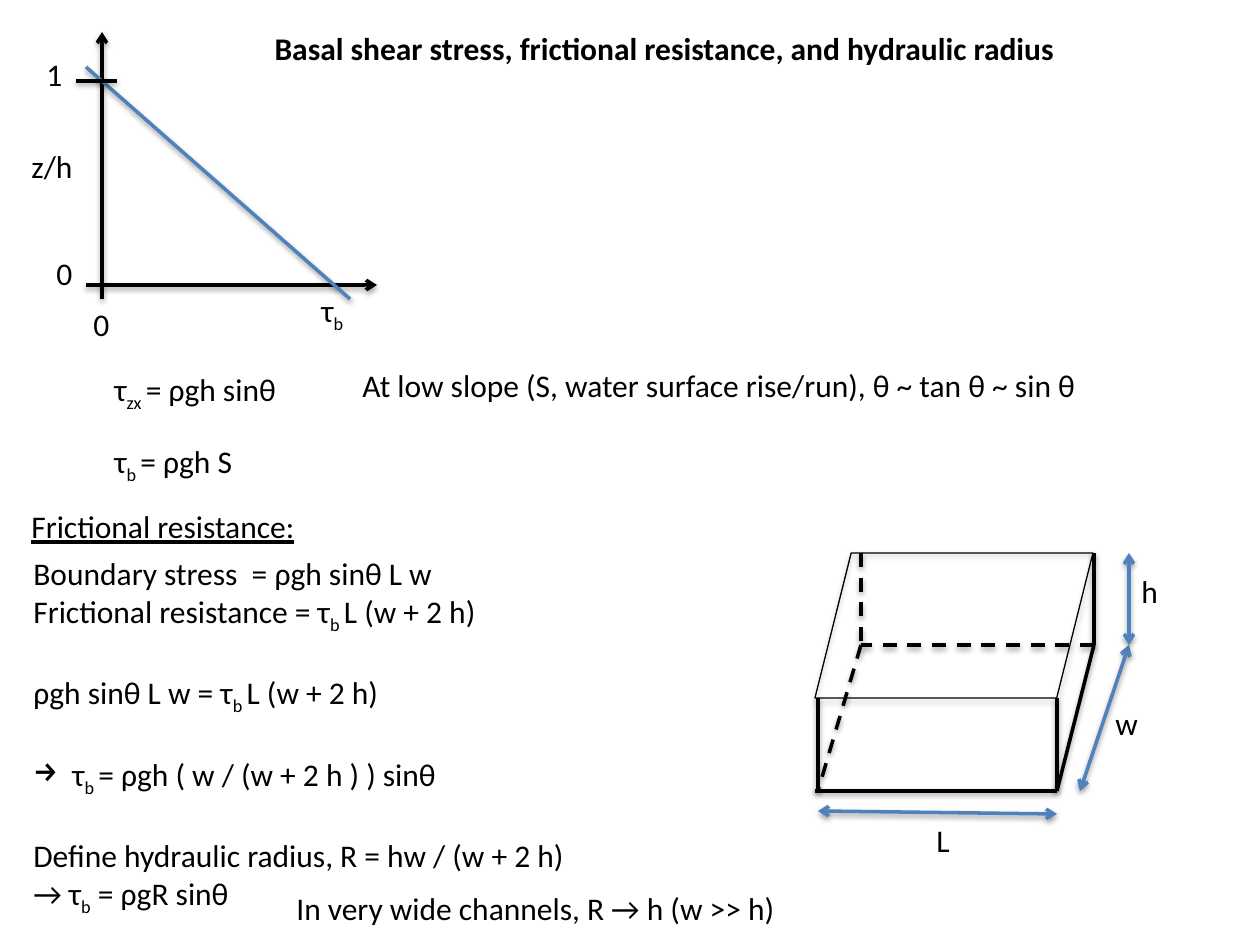
from lxml import etree
from pptx import Presentation
from pptx.dml.color import RGBColor
from pptx.enum.dml import MSO_LINE
from pptx.enum.shapes import MSO_CONNECTOR, MSO_SHAPE
from pptx.enum.text import MSO_ANCHOR, MSO_AUTO_SIZE, PP_ALIGN
from pptx.oxml.ns import qn
from pptx.util import Pt

DASH = MSO_LINE.DASH
STRAIGHT = MSO_CONNECTOR.STRAIGHT
PARALLELOGRAM = MSO_SHAPE.PARALLELOGRAM
TOP = MSO_ANCHOR.TOP
LEFT = PP_ALIGN.LEFT
FIT_SHAPE = MSO_AUTO_SIZE.SHAPE_TO_FIT_TEXT

EMU_PER_PX = 914400 / 126
BLACK = "000000"
BLUE = "4F81BD"
LABEL_HEIGHT = 50
BLANK_LINE = 22

LABELS = [
    (102, 364, 199, "τ|zx |= ρgh sinθ"),
    (350, 360, 741, "At low slope (S, water surface rise/run), θ ~ tan θ ~ sin θ"),
    (102, 436, 146, "τ|b |= ρgh S"),
    (81, 299, 42, "0"),
    (309, 285, 49, "τ|b"),
    (34, 49, 42, "1"),
    (19, 141, 67, "z/h"),
    (44, 248, 42, "0"),
    (924, 815, 39, "L"),
    (1103, 698, 48, "w"),
    (1129, 566, 42, "h"),
    (284, 883, 512, "In very wide channels, R → h (w >> h)"),
]

DERIVATION = [
    ("Boundary stress  = ρgh sinθ L w", 0, None),
    ("Frictional resistance = τ|b |L (w + 2 h)", 0, None),
    ("ρgh sinθ L w = τ|b |L (w + 2 h)", BLANK_LINE, None),
    ("τ|b |= ρgh ( w / (w + 2 h ) ) sinθ", BLANK_LINE, "→"),
    ("Define hydraulic radius, R = hw / (w + 2 h)", BLANK_LINE, None),
    ("→ τ|b| = ρgR sinθ", 0, None),
]


def px(value):
    return round(value * EMU_PER_PX)


def color(value):
    return RGBColor.from_string(value)


def write(paragraph, text, bold=False, underline=False):
    paragraph.alignment = LEFT
    for index, part in enumerate(text.split("|")):
        run = paragraph.add_run()
        run.text = part
        run.font.name = "Calibri"
        run.font.size = Pt(18)
        run.font.bold = bold
        run.font.underline = underline
        run.font.color.rgb = color(BLACK)
        if index % 2:
            run._r.get_or_add_rPr().set("baseline", "-25000")


def add_bullet(paragraph, character, indent):
    properties = paragraph._p.get_or_add_pPr()
    properties.set("marL", str(px(indent)))
    properties.set("indent", str(-px(indent)))
    etree.SubElement(properties, qn("a:buChar")).set("char", character)


def fit_frame(shape):
    frame = shape.text_frame
    frame.word_wrap = False
    frame.auto_size = FIT_SHAPE
    frame.vertical_anchor = TOP
    return frame


def add_text_frame(slide, left, top, width, height):
    box = slide.shapes.add_textbox(px(left), px(top), px(width), px(height))
    return fit_frame(box)


def add_label(slide, left, top, width, text, underline=False):
    frame = add_text_frame(slide, left, top, width, LABEL_HEIGHT)
    write(frame.paragraphs[0], text, underline=underline)


def add_title(slide, text):
    title = slide.shapes.title
    title.left, title.top = px(262), px(23)
    title.width, title.height = px(818), px(LABEL_HEIGHT)
    write(fit_frame(title).paragraphs[0], text, bold=True)


def add_derivation(slide):
    frame = add_text_frame(slide, 21, 548, 573, 356)
    for index, (text, space, bullet) in enumerate(DERIVATION):
        paragraph = frame.add_paragraph() if index else frame.paragraphs[0]
        paragraph.space_before = Pt(space)
        write(paragraph, text)
        if bullet:
            add_bullet(paragraph, bullet, 39)


def add_line(slide, start, end, line_color=BLACK, dash=None, arrows=()):
    connector = slide.shapes.add_connector(STRAIGHT, *map(px, start + end))
    connector.line.color.rgb = color(line_color)
    connector.line.width = Pt(2)
    if dash:
        connector.line.dash_style = dash
    outline = connector._element.spPr.find(qn("a:ln"))
    for arrow in arrows:
        etree.SubElement(outline, qn(f"a:{arrow}")).set("type", "arrow")


def add_stress_profile(slide):
    add_line(slide, (102, 299), (102, 32), arrows=["tailEnd"])
    add_line(slide, (86, 285), (377, 285), arrows=["tailEnd"])
    add_line(slide, (350, 299), (86, 67), BLUE)
    add_line(slide, (117, 81), (76, 81))


def add_channel(slide):
    surface = slide.shapes.add_shape(PARALLELOGRAM, px(815), px(553), px(278), px(145))
    surface.fill.background()
    surface.line.color.rgb = color(BLACK)
    surface.line.width = Pt(0.75)

    back_top, back_right, back_left = (1094, 553), (1094, 645), (861, 645)
    front_left, front_right = (818, 791), (1057, 791)
    add_line(slide, back_top, back_right)
    add_line(slide, (818, 698), front_left)
    add_line(slide, (1057, 698), front_right)
    add_line(slide, (815, 791), front_right)
    add_line(slide, back_right, front_right)
    for start, end in [
        (back_right, back_left),
        ((861, 553), back_left),
        (back_left, front_left),
    ]:
        add_line(slide, start, end, dash=DASH)
    for start, end in [
        ((818, 811), (1057, 814)),
        ((1129, 645), (1080, 791)),
        ((1129, 553), (1129, 645)),
    ]:
        add_line(slide, start, end, BLUE, arrows=["headEnd", "tailEnd"])


def main():
    presentation = Presentation()
    presentation.slide_width, presentation.slide_height = px(1260), px(945)
    slide = presentation.slides.add_slide(presentation.slide_layouts[5])
    add_title(slide, "Basal shear stress, frictional resistance, and hydraulic radius")
    add_stress_profile(slide)
    add_channel(slide)
    for label in LABELS:
        add_label(slide, *label)
    add_label(slide, 19, 501, 292, "Frictional resistance:", underline=True)
    add_derivation(slide)
    presentation.save("out.pptx")


if __name__ == "__main__":
    main()
